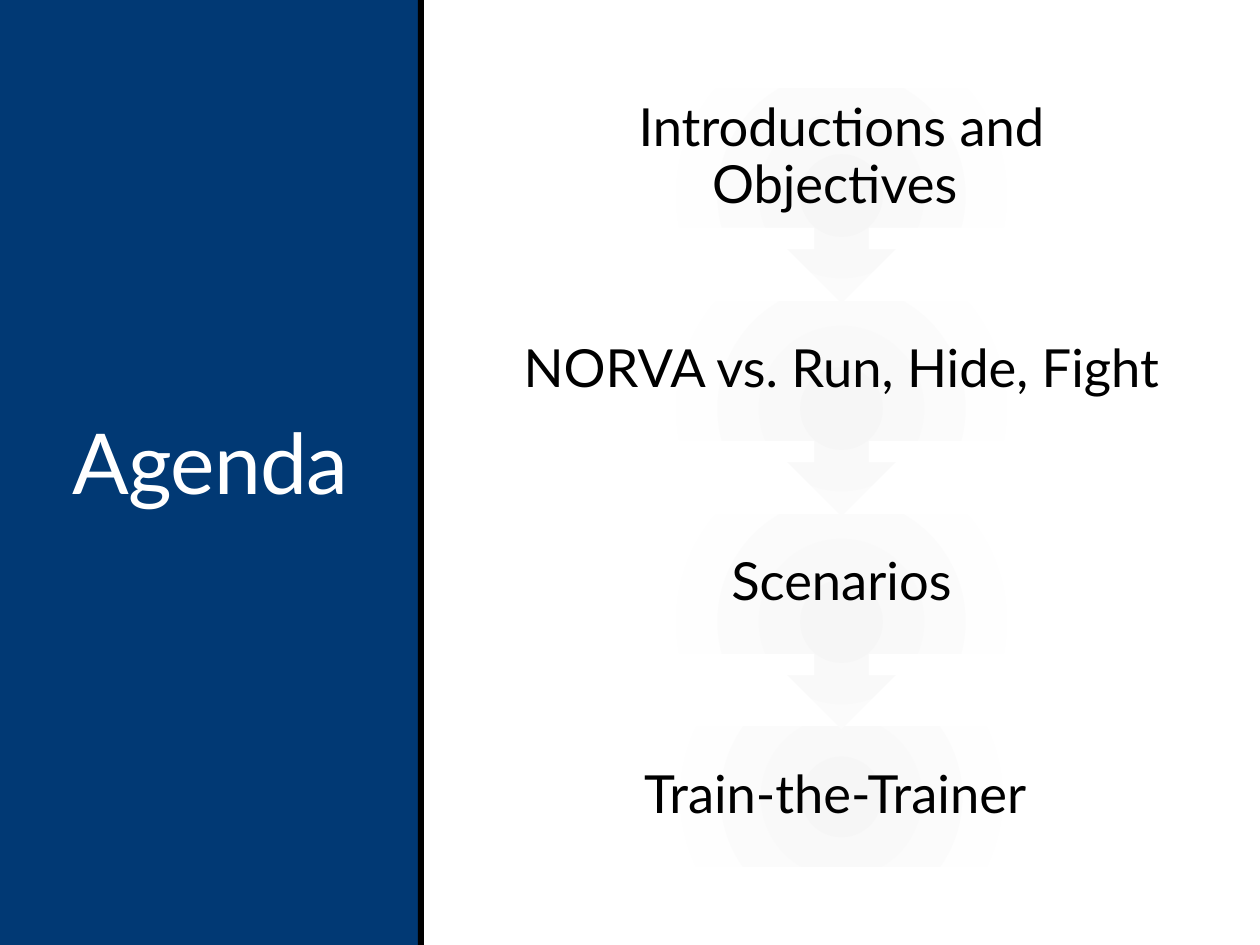
from pptx import Presentation, util as u
from pptx.dml.color import RGBColor
from pptx.enum import shapes, text
from pptx.oxml import parse_xml
from pptx.oxml.ns import nsdecls

EMU_PER_PX = 914400 / 126
FONT = "Lato"
COLORS = {"navy": "013974", "black": "000000", "white": "FFFFFF"}
GLOW_STOPS = {0: "F6F6F6", 45: "FEFEFE", 100: "FFFFFF"}
STEPS = [
    "Introductions and Objectives ",
    "NORVA vs. Run, Hide, Fight",
    "Scenarios",
    "Train-the-Trainer ",
]
STEP_LEFT, STEP_TOP, STEP_WIDTH, STEP_HEIGHT = 490, 88, 703, 140
STEP_PITCH, CALLOUT_HEIGHT = 213, 215
STEP_INSET = 29


def px(*lengths):
    return [u.Emu(round(n * EMU_PER_PX)) for n in lengths]


def set_all(obj, values):
    for name, value in values.items():
        setattr(obj, name, value)


def set_text(sp, words, size, color, spacing, inset=None):
    """Write one centred paragraph; inset is the margin in px on every side."""
    tf = sp.text_frame
    set_all(tf, {"text": words, "word_wrap": True,
                 "auto_size": text.MSO_AUTO_SIZE.NONE,
                 "vertical_anchor": text.MSO_ANCHOR.MIDDLE})
    if inset is not None:
        margin, = px(inset)
        set_all(tf, {f"margin_{side}": margin
                     for side in ("left", "top", "right", "bottom")})
    p = tf.paragraphs[0]
    set_all(p, {"alignment": text.PP_ALIGN.CENTER, "line_spacing": spacing})
    r = p.runs[0]
    set_all(r.font, {"name": FONT, "size": u.Pt(size), "bold": False})
    r.font.color.rgb = RGBColor.from_string(COLORS[color])
    return r


def add_plain_shape(parent, kind, *box):
    sp = parent.shapes.add_shape(kind, *px(*box))
    sp.shadow.inherit = False
    sp.line.fill.background()
    return sp


def add_panel(s, color, *box):
    sp = add_plain_shape(s, shapes.MSO_SHAPE.RECTANGLE, *box)
    sp.fill.solid()
    sp.fill.fore_color.rgb = RGBColor.from_string(COLORS[color])


def fill_glow(sp):
    """Give the shape a pale circular gradient."""
    stops = "".join(
        f'<a:gs pos="{pos * 1000}"><a:srgbClr val="{color}"/></a:gs>'
        for pos, color in GLOW_STOPS.items())
    glow = parse_xml(
        f'<a:gradFill {nsdecls("a")} rotWithShape="1"><a:gsLst>{stops}</a:gsLst>'
        '<a:path path="circle">'
        '<a:fillToRect l="100000" t="100000" r="100000" b="100000"/>'
        '</a:path></a:gradFill>')
    sp.element.spPr.find(".//{*}prstGeom").addnext(glow)


def add_title(s, words):
    title = s.shapes.title
    s.shapes.element.append(title.element)  # in front of the side panel
    title.left, title.top, title.width, title.height = px(51, 72, 319, 794)
    r = set_text(title, words, 48, "white", 0.85)
    r.font._element.set("spc", "-50")


def add_step(group, index, words):
    """Add a step; every step but the last points down to the next one."""
    top = STEP_TOP + index * STEP_PITCH
    if index == len(STEPS) - 1:
        kind, height, rotation = shapes.MSO_SHAPE.RECTANGLE, STEP_HEIGHT, 0
    else:
        kind, height, rotation = (shapes.MSO_SHAPE.UP_ARROW_CALLOUT,
                                  CALLOUT_HEIGHT, 180)
    sp = add_plain_shape(group, kind, STEP_LEFT, top, STEP_WIDTH, height)
    sp.rotation = rotation
    fill_glow(sp)
    label = group.shapes.add_textbox(
        *px(STEP_LEFT, top, STEP_WIDTH, STEP_HEIGHT))
    set_text(label, words, 30, "black", 0.9, STEP_INSET)


def main():
    prs = Presentation()
    prs.slide_width, prs.slide_height = px(1260, 945)
    s = prs.slides.add_slide(prs.slide_layouts[5])
    add_panel(s, "navy", 0, 0, 418, 945)
    add_panel(s, "black", 418, 0, 6, 945)
    add_title(s, "Agenda")
    steps = s.shapes.add_group_shape()
    for index, words in reversed(list(enumerate(STEPS))):
        add_step(steps, index, words)
    prs.save("out.pptx")


if __name__ == "__main__":
    main()
